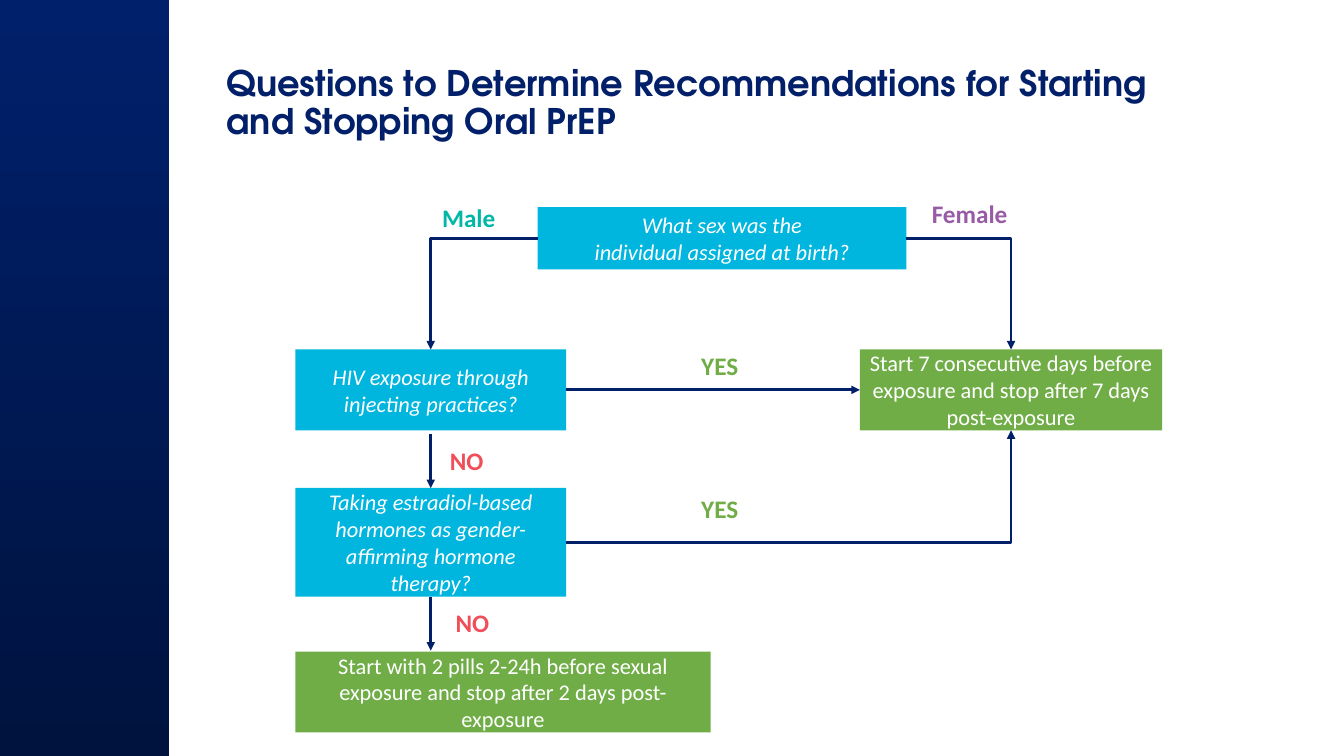
from lxml.etree import SubElement
from pptx import Presentation
from pptx.dml.color import RGBColor
from pptx.enum.shapes import MSO_CONNECTOR, MSO_SHAPE
from pptx.enum.text import MSO_ANCHOR, PP_ALIGN
from pptx.oxml.ns import qn
from pptx.util import Pt

NAVY = RGBColor(0x02, 0x20, 0x69)
DARK = RGBColor(0x00, 0x13, 0x3F)
DEEP = RGBColor(0x00, 0x20, 0x6B)
BLUE = RGBColor(0x00, 0xB5, 0xDE)
GREEN = RGBColor(0x70, 0xAD, 0x47)
TEAL = RGBColor(0x00, 0xB8, 0xA5)
RED = RGBColor(0xF0, 0x4E, 0x58)
PURPLE = RGBColor(0x97, 0x5C, 0xA5)
WHITE = RGBColor(0xFF, 0xFF, 0xFF)
TOP, LEFT, BOTTOM, RIGHT = range(4)


def style(para, size, color, name="Calibri", bold=False, italic=False):
    """Set the font of a paragraph."""
    font = para.font
    font.name, font.size, font.color.rgb = name, Pt(size), color
    font.bold, font.italic = bold, italic


def add_rect(slide, place):
    """Add a plain rectangle without line or shadow."""
    rect = slide.shapes.add_shape(MSO_SHAPE.RECTANGLE, *map(Pt, place))
    rect.shadow.inherit = False
    rect.line.fill.background()
    return rect


def add_band(slide, place):
    """Add the side band, dark at its foot."""
    fill = add_rect(slide, place).fill
    fill.gradient()
    fill.gradient_angle = 90
    for stop, color in zip(fill.gradient_stops, (DARK, DEEP)):
        stop.color.rgb = color


def add_box(slide, text, place, color):
    """Add a filled box; questions are blue and italic."""
    box = add_rect(slide, place)
    box.fill.solid()
    box.fill.fore_color.rgb = color
    frame = box.text_frame
    frame.word_wrap = True
    frame.vertical_anchor = MSO_ANCHOR.MIDDLE
    para = frame.paragraphs[0]
    para.text = text
    para.alignment = PP_ALIGN.CENTER
    style(para, 16, WHITE, italic=color == BLUE)
    return box


def add_text(slide, text, place):
    """Add a wrapping text box and return its frame."""
    frame = slide.shapes.add_textbox(*map(Pt, place)).text_frame
    frame.word_wrap = True
    frame.text = text
    return frame


def add_title(slide, text, place):
    """Add the slide title."""
    frame = add_text(slide, text, place)
    frame.vertical_anchor = MSO_ANCHOR.MIDDLE
    para = frame.paragraphs[0]
    para.line_spacing = 0.9
    style(para, 25.2, NAVY, "TeX Gyre Adventor", bold=True)


def add_label(slide, text, place, color):
    """Add a bold, centred answer beside an arrow."""
    para = add_text(slide, text, place).paragraphs[0]
    para.alignment = PP_ALIGN.CENTER
    style(para, 18, color, bold=True)


def add_arrow(slide, start, end, bent=False):
    """Add a navy arrow, with one corner if bent."""
    kind = MSO_CONNECTOR.ELBOW if bent else MSO_CONNECTOR.STRAIGHT
    arrow = slide.shapes.add_connector(kind, *map(Pt, start + end))
    arrow.line.color.rgb = NAVY
    arrow.line.width = Pt(2)
    props = arrow._element.spPr
    if bent:
        props.find(qn("a:prstGeom")).set("prst", "bentConnector2")
    SubElement(props.find(qn("a:ln")), qn("a:tailEnd"), type="triangle")
    SubElement(props, qn("a:effectLst"))
    return arrow


def link(slide, first, out, last, into, bent=False):
    """Join two boxes at the given sides."""
    arrow = add_arrow(slide, (0, 0), (0, 0), bent)
    arrow.begin_connect(first, out)
    arrow.end_connect(last, into)


def main():
    """Build the slide."""
    deck = Presentation()
    deck.slide_width, deck.slide_height = Pt(960), Pt(540)
    slide = deck.slides.add_slide(deck.slide_layouts[6])
    add_band(slide, (0, 0, 121, 540))
    add_title(slide, "Questions to Determine Recommendations for Starting "
              "and Stopping Oral PrEP", (154.8, 41, 720, 66.2))

    sex = add_box(slide, "What sex was the\nindividual assigned at birth?",
                  (384, 148, 263.5, 44.5), BLUE)
    risk = add_box(slide, "HIV exposure through injecting practices?",
                   (211, 249.6, 193.4, 57.8), BLUE)
    therapy = add_box(slide, "Taking estradiol-based hormones as "
                      "gender-affirming hormone therapy?",
                      (211, 348.4, 193.4, 77.8), BLUE)
    week = add_box(slide, "Start 7 consecutive days before exposure "
                   "and stop after 7 days post-exposure",
                   (614.2, 249.6, 216, 57.8), GREEN)
    add_box(slide, "Start with 2 pills 2-24h before sexual exposure "
            "and stop after 2 days post-exposure",
            (211, 465.4, 296.6, 57.8), GREEN)

    link(slide, sex, LEFT, risk, TOP, bent=True)
    link(slide, sex, RIGHT, week, TOP, bent=True)
    link(slide, risk, RIGHT, week, LEFT)
    link(slide, therapy, RIGHT, week, BOTTOM, bent=True)
    for top in (310.2, 426.2):
        add_arrow(slide, (307.7, top), (307.7, top + 38.5))

    for text, left, top, width, color in (
            ("Male", 305.3, 141.1, 59, TEAL),
            ("Female", 656.6, 138.3, 72, PURPLE),
            ("YES", 493.2, 247, 41.8, GREEN),
            ("YES", 493.2, 348.5, 41.8, GREEN),
            ("NO", 312.9, 314.6, 41, RED),
            ("NO", 316.9, 430.6, 41, RED)):
        add_label(slide, text, (left, top, width, 30), color)
    deck.save("out.pptx")


if __name__ == "__main__":
    main()
